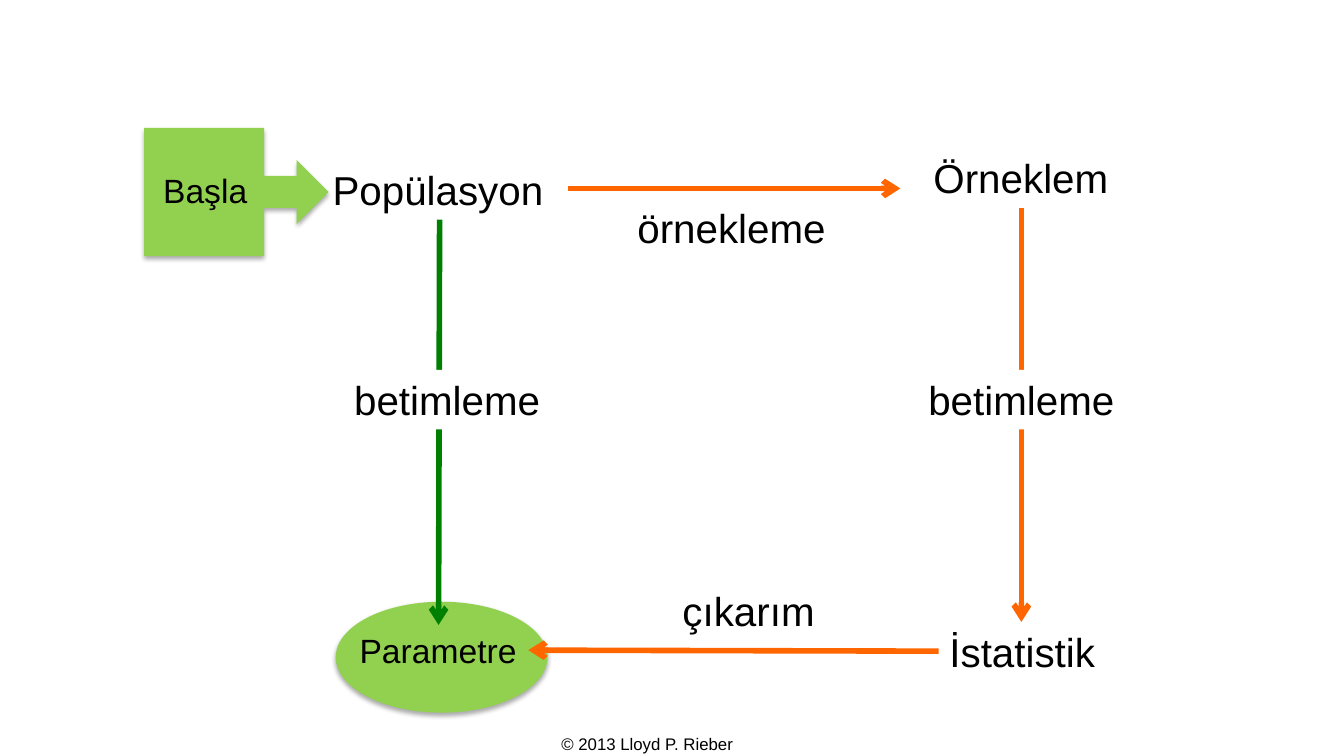
from dataclasses import dataclass
from lxml import etree
from pptx import Presentation
from pptx import util as u
from pptx.dml.color import RGBColor
from pptx.enum import shapes, text
from pptx.oxml import ns


@dataclass(frozen=True)
class Theme:
    font: str = "Arial"
    ink: str = "000000"
    paper: str = "FFFFFF"
    lime: str = "92D050"
    green: str = "008000"
    orange: str = "FF6600"
    large: float = 28.8
    mid: float = 24
    small: float = 12
    stroke: float = 4


class Board:
    def __init__(self, slide, theme):
        self.slide = slide
        self.theme = theme

    def node(self, kind, box):
        shape = self.slide.shapes.add_shape(kind, *map(u.Inches, box))
        shape.fill.solid()
        shape.fill.fore_color.rgb = RGBColor.from_string(self.theme.lime)
        shape.line.fill.background()
        shape.shadow.inherit = False
        effect = shape.element.spPr.find(ns.qn("a:effectLst"))
        shade = etree.SubElement(
            effect, ns.qn("a:outerShdw"), blurRad=str(u.Pt(3.5)),
            dist=str(u.Pt(2.2)), dir="5400000", rotWithShape="0")
        color = etree.SubElement(shade, ns.qn("a:srgbClr"), val=self.theme.ink)
        etree.SubElement(color, ns.qn("a:alpha"), val="32000")
        return shape

    def label(self, words, box, size, align=text.PP_ALIGN.CENTER, fill=None):
        shape = self.slide.shapes.add_textbox(*map(u.Inches, box))
        if fill:
            shape.fill.solid()
            shape.fill.fore_color.rgb = RGBColor.from_string(fill)
        frame = shape.text_frame
        frame.word_wrap = False
        frame.auto_size = text.MSO_AUTO_SIZE.SHAPE_TO_FIT_TEXT
        para = frame.paragraphs[0]
        para.alignment = align
        run = para.add_run()
        run.text = words
        run.font.name = self.theme.font
        run.font.size = u.Pt(size)
        run.font.color.rgb = RGBColor.from_string(self.theme.ink)
        return frame

    def arrow(self, start, end, color):
        line = self.slide.shapes.add_connector(
            shapes.MSO_CONNECTOR.STRAIGHT, *map(u.Inches, start + end))
        line.line.width = u.Pt(self.theme.stroke)
        line.line.color.rgb = RGBColor.from_string(color)
        etree.SubElement(line.line._get_or_add_ln(), ns.qn("a:tailEnd"), type="arrow")
        etree.SubElement(line.element.spPr, ns.qn("a:effectLst"))

    def note(self, words, box):
        frame = self.label(words, box, self.theme.small)
        frame.word_wrap = True
        frame.auto_size = text.MSO_AUTO_SIZE.NONE
        frame.vertical_anchor = text.MSO_ANCHOR.MIDDLE


def main():
    deck = Presentation()
    deck.slide_width, deck.slide_height = u.Inches(13.33), u.Inches(7.5)
    theme = Theme()
    board = Board(deck.slides.add_slide(deck.slide_layouts[6]), theme)

    board.node(shapes.MSO_SHAPE.OVAL, (3.33, 5.97, 2.1, 1.1))
    start = board.node(shapes.MSO_SHAPE.RIGHT_ARROW_CALLOUT, (1.43, 1.27, 1.83, 1.27))
    for index, value in enumerate((0.25, 0.25, 0.25, 0.65)):
        start.adjustments[index] = value

    for words, box in (
        ("Başla", (1.51, 1.64, 1.05, 0.5)),
        ("Parametre", (3.46, 6.2, 1.77, 0.5)),
    ):
        board.label(words, box, theme.mid)

    left, center = text.PP_ALIGN.LEFT, text.PP_ALIGN.CENTER
    for words, x, y, width, align in (
        ("Örneklem", 9.16, 1.47, 1.95, left),
        ("Popülasyon", 3.2, 1.59, 2.31, left),
        ("İstatistik", 9.31, 6.17, 1.66, center),
        ("örnekleme", 6.21, 1.97, 2.09, center),
        ("çıkarım", 6.66, 5.77, 1.53, center),
    ):
        board.label(words, (x, y, width, 0.59), theme.large, align)

    for begin, end, color in (
        ((5.63, 1.87), (8.93, 1.87), theme.orange),
        ((10.13, 2.06), (10.13, 6.17), theme.orange),
        ((9.31, 6.46), (5.24, 6.45), theme.orange),
        ((4.36, 2.18), (4.35, 6.2), theme.green),
    ):
        board.arrow(begin, end, color)

    for x, width in ((9.1, 2.06), (3.38, 2.11)):
        board.label("betimleme", (x, 3.67, width, 0.59), theme.large, fill=theme.paper)

    board.note("© 2013 Lloyd P. Rieber", (4.31, 7.18, 4.22, 0.4))
    deck.save("out.pptx")


if __name__ == "__main__":
    main()
